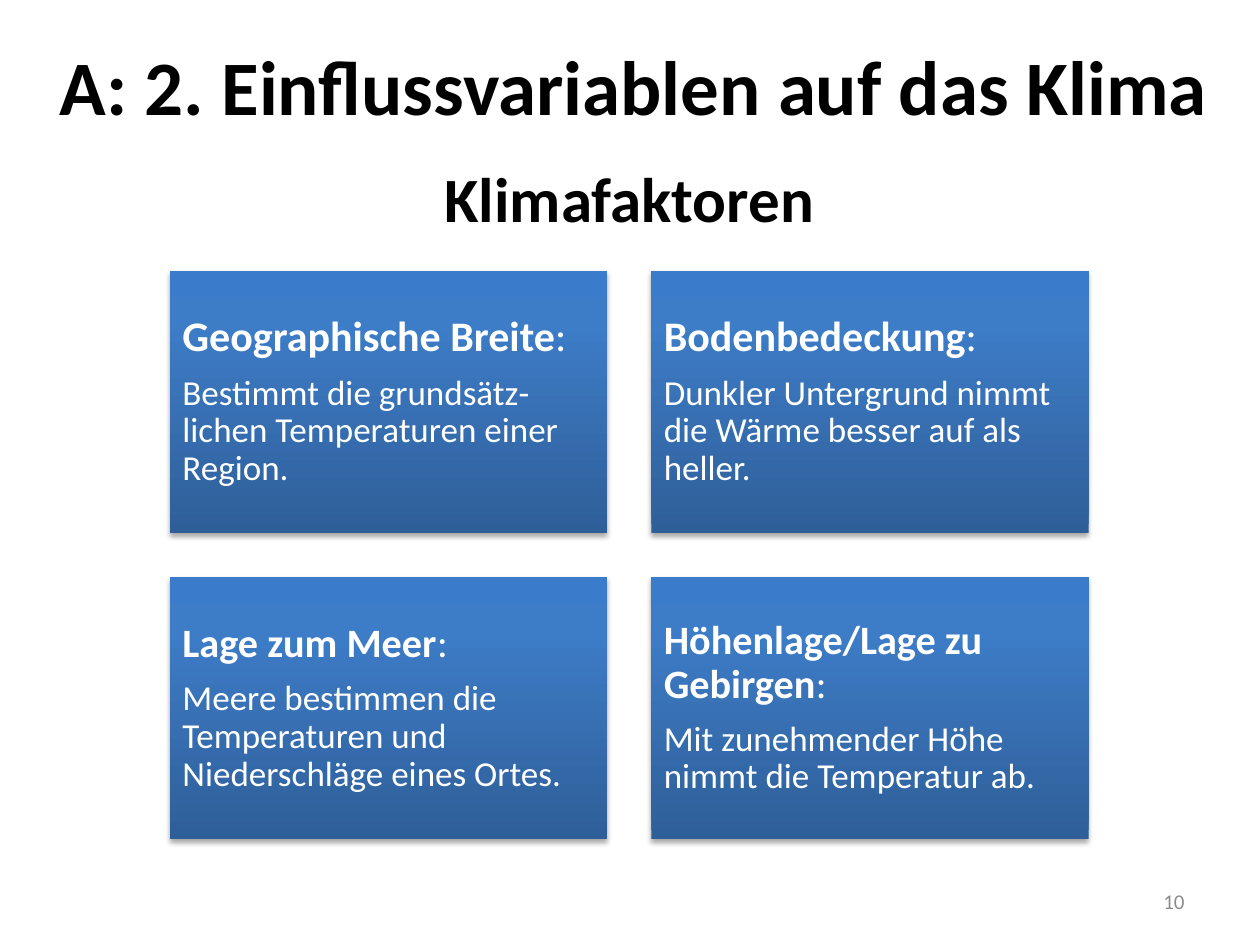
from lxml import etree
from pptx import Presentation
from pptx.dml.color import RGBColor
from pptx.enum.shapes import MSO_SHAPE
from pptx.enum.text import MSO_ANCHOR, PP_ALIGN
from pptx.oxml.ns import qn
from pptx.util import Inches, Pt

RECTANGLE = MSO_SHAPE.RECTANGLE
MIDDLE, TOP = MSO_ANCHOR.MIDDLE, MSO_ANCHOR.TOP
LEFT, CENTER, RIGHT = PP_ALIGN.LEFT, PP_ALIGN.CENTER, PP_ALIGN.RIGHT
TITLE_ONLY = 5

FONT = "Calibri"
BLACK, WHITE, GREY = "000000", "FFFFFF", "8C8C8C"
CARD_GRADIENT = [(0, "2F5F99"), (80, "3D7CC7"), (100, "3A7CCB")]

# Card grid, in inches
GRID_LEFT, GRID_TOP = 1.35, 2.15
CARD_WIDTH, CARD_HEIGHT, GAP = 3.47, 2.08, 0.35
COLUMNS = 2

# Heading, heading size, explanation
FACTORS = [
    ("Geographische Breite", 24,
     "Bestimmt die grundsätz-lichen Temperaturen einer Region."),
    ("Bodenbedeckung", 24,
     "Dunkler Untergrund nimmt die Wärme besser auf als heller."),
    ("Lage zum Meer", 23,
     "Meere bestimmen die Temperaturen und Niederschläge eines Ortes."),
    ("Höhenlage/Lage zu Gebirgen", 23,
     "Mit zunehmender Höhe nimmt die Temperatur ab."),
]


def color(value):
    return RGBColor.from_string(value)


def format_paragraph(paragraph, size, hex_color, align, bold=None):
    paragraph.alignment = align
    font = paragraph.font
    font.name, font.size, font.bold = FONT, Pt(size), bold
    font.color.rgb = color(hex_color)


def fill_text(shape, text, size, hex_color, align, anchor, bold=None):
    frame = shape.text_frame
    frame.word_wrap = True
    frame.vertical_anchor = anchor
    frame.text = text
    format_paragraph(frame.paragraphs[0], size, hex_color, align, bold)


def add_title(slide, text):
    title = slide.shapes.title
    title.left, title.top = Inches(0.28), Inches(0.05)
    title.width, title.height = Inches(9.51), Inches(1.25)
    fill_text(title, text, 44, BLACK, CENTER, MIDDLE, bold=True)


def add_label(slide, box, *text_format, **options):
    label = slide.shapes.add_textbox(*map(Inches, box))
    fill_text(label, *text_format, **options)


def add_gradient(shape, stops):
    """Run the colour stops from the bottom of the shape to its top."""
    shape.fill.gradient()
    shape.fill.gradient_angle = 90
    stop_list = shape.element.spPr.find(".//" + qn("a:gsLst"))
    for stop in list(stop_list):
        stop_list.remove(stop)
    for percent, value in stops:
        stop = etree.SubElement(stop_list, qn("a:gs"), pos=str(percent * 1000))
        etree.SubElement(stop, qn("a:srgbClr"), val=value)


def add_shadow(shape):
    shape.shadow.inherit = False
    effects = shape.element.spPr.find(qn("a:effectLst"))
    shadow = etree.SubElement(
        effects, qn("a:outerShdw"), blurRad=str(Pt(3.1)), dist=str(Pt(1.8)),
        dir="5400000", rotWithShape="0")
    shade = etree.SubElement(shadow, qn("a:srgbClr"), val=BLACK)
    etree.SubElement(shade, qn("a:alpha"), val="35000")


def add_card(slide, left, top, heading, heading_size, explanation):
    card = slide.shapes.add_shape(
        RECTANGLE, Inches(left), Inches(top),
        Inches(CARD_WIDTH), Inches(CARD_HEIGHT))
    card.line.fill.background()
    add_gradient(card, CARD_GRADIENT)
    add_shadow(card)

    frame = card.text_frame
    frame.word_wrap = True
    frame.vertical_anchor = MIDDLE
    frame.margin_left = frame.margin_right = Inches(0.1)
    frame.margin_top = frame.margin_bottom = Inches(0.1)

    # Bold heading with a regular colon, then the explanation
    heading_paragraph = frame.paragraphs[0]
    heading_run = heading_paragraph.add_run()
    heading_run.text = heading
    heading_run.font.bold = True
    heading_paragraph.add_run().text = ":"
    body_paragraph = frame.add_paragraph()
    body_paragraph.text = explanation
    for paragraph, size in ((heading_paragraph, heading_size),
                            (body_paragraph, 20)):
        format_paragraph(paragraph, size, WHITE, LEFT)
        paragraph.line_spacing = 0.9
        paragraph.space_after = Pt(8)


def main():
    presentation = Presentation()
    presentation.slide_width = Inches(10)
    presentation.slide_height = Inches(7.5)
    slide = presentation.slides.add_slide(
        presentation.slide_layouts[TITLE_ONLY])

    # Title and subtitle
    add_title(slide, "A: 2. Einflussvariablen auf das Klima")
    add_label(slide, (0.24, 1.22, 9.51, 0.71),
              "Klimafaktoren", 36, BLACK, CENTER, TOP, bold=True)

    # Climate factors, row by row
    for index, factor in enumerate(FACTORS):
        row, column = divmod(index, COLUMNS)
        add_card(slide, GRID_LEFT + column * (CARD_WIDTH + GAP),
                 GRID_TOP + row * (CARD_HEIGHT + GAP), *factor)

    # Page number
    add_label(slide, (7.17, 6.95, 2.33, 0.4), "10", 12, GREY, RIGHT, MIDDLE)

    presentation.save("out.pptx")


if __name__ == "__main__":
    main()
